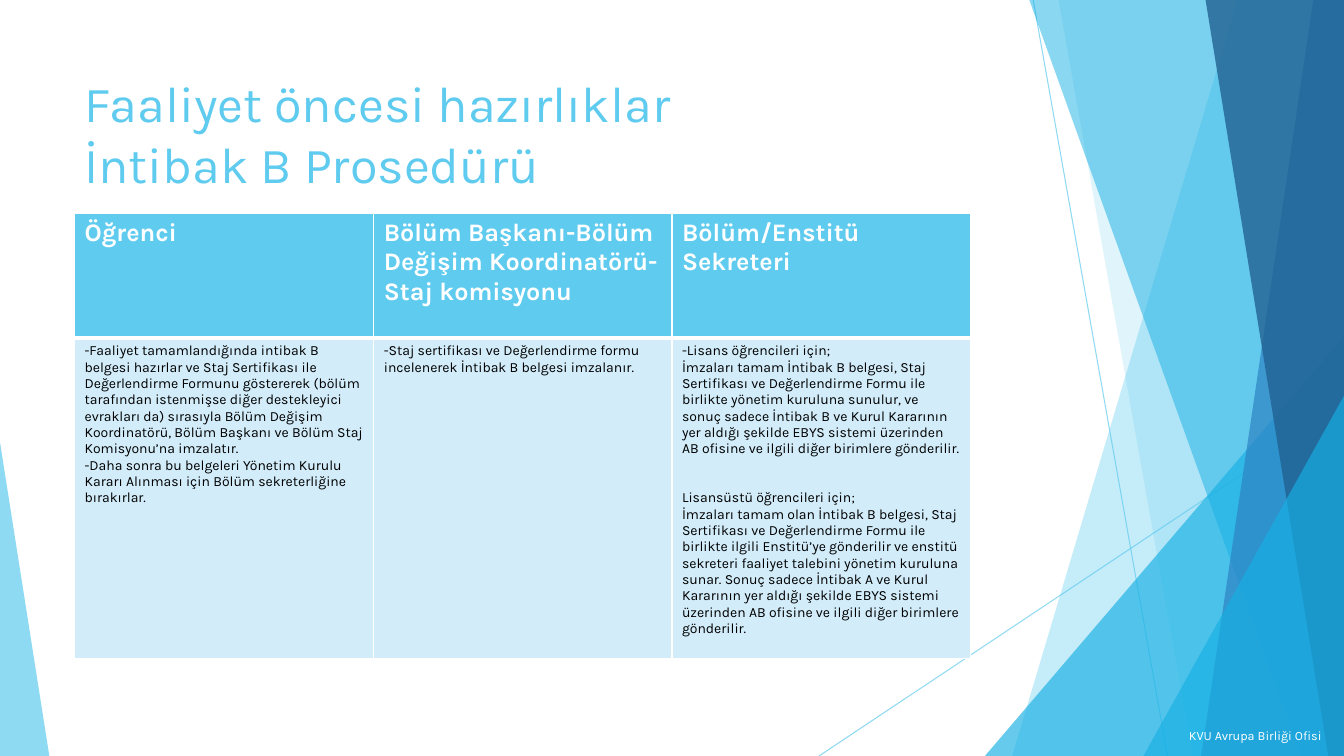
from typing import NamedTuple

from lxml import etree
from pptx import Presentation
from pptx.dml.color import RGBColor
from pptx.enum.shapes import MSO_CONNECTOR, MSO_SHAPE
from pptx.enum.text import MSO_ANCHOR, PP_ALIGN
from pptx.oxml.ns import qn
from pptx.util import Emu, Pt

SCALE = 9525  # EMU in one px
WIDTH, HEIGHT = 1280, 720
FONT = "Karla"
STRAIGHT = MSO_CONNECTOR.STRAIGHT
TRIANGLE = MSO_SHAPE.ISOSCELES_TRIANGLE
LEFT, RIGHT = PP_ALIGN.LEFT, PP_ALIGN.RIGHT
TOP, MIDDLE = MSO_ANCHOR.TOP, MSO_ANCHOR.MIDDLE
COLORS = {
    "sky": "5FCBEF",
    "cyan": "17B0E4",
    "blue": "2E83C3",
    "navy": "226292",
    "pale": "D2ECF9",
    "white": "FFFFFF",
    "black": "000000",
}


class Ray(NamedTuple):
    x1: int
    y1: int
    x2: int
    y2: int


class Facet(NamedTuple):
    """A full-height panel from a slanted left edge to the slide's right edge."""
    top: int
    bottom: int
    color: str
    alpha: int


class Wedge(NamedTuple):
    """A triangle standing on the slide's bottom edge."""
    left: int
    top: int
    width: int
    peak: int
    color: str
    alpha: int


class Label(NamedTuple):
    text: str
    box: tuple[int, int, int, int]
    size: int
    color: str
    align: PP_ALIGN
    anchor: MSO_ANCHOR


RAYS = [Ray(984, 0, 1112, HEIGHT), Ray(WIDTH, 387, 780, HEIGHT)]
PANELS = [
    Facet(1179, 964, "sky", 36),
    Facet(1008, 1136, "sky", 20),
    Wedge(938, 320, 342, 1, "cyan", 66),
    Facet(980, 1239, "cyan", 50),
    Facet(1251, 1144, "blue", 70),
    Facet(1148, 1265, "navy", 80),
    Wedge(1089, 377, 191, 1, "cyan", 66),
    Wedge(0, 421, 47, 0, "sky", 70),
]
TITLE = Label("Faaliyet öncesi hazırlıklar\vİntibak B Prosedürü",
              (71, 64, 902, 138), 36, "sky", LEFT, TOP)
FOOTER = Label("KVU Avrupa Birliği Ofisi",
               (607, 681, 661, 38), 9, "white", RIGHT, MIDDLE)

TABLE_AT = (71, 203)
COLUMNS = (285, 284, 284)
ROWS = (119, 305)
GAP_HEAD = "Lisansüstü öğrencileri için;"
HEADS = [
    ["Öğrenci"],
    ["Bölüm Başkanı-Bölüm Değişim Koordinatörü-Staj komisyonu"],
    ["Bölüm/Enstitü Sekreteri"],
]
DUTIES = [
    [
        "-Faaliyet tamamlandığında intibak B belgesi hazırlar ve Staj Sertifikası "
        "ile Değerlendirme Formunu göstererek (bölüm tarafından istenmişse diğer "
        "destekleyici evrakları da) sırasıyla Bölüm Değişim Koordinatörü, Bölüm "
        "Başkanı ve Bölüm Staj Komisyonu’na imzalatır.",
        "-Daha sonra bu belgeleri Yönetim Kurulu Kararı Alınması için Bölüm "
        "sekreterliğine bırakırlar.",
    ],
    [
        "-Staj sertifikası ve Değerlendirme formu incelenerek İntibak B belgesi "
        "imzalanır.",
    ],
    [
        "-Lisans öğrencileri için;",
        "İmzaları tamam İntibak B belgesi, Staj Sertifikası ve Değerlendirme Formu "
        "ile birlikte yönetim kuruluna sunulur, ve sonuç sadece İntibak B ve Kurul "
        "Kararının yer aldığı şekilde EBYS sistemi üzerinden AB ofisine ve ilgili "
        "diğer birimlere gönderilir.",
        GAP_HEAD,
        "İmzaları tamam olan İntibak B belgesi, Staj Sertifikası ve Değerlendirme "
        "Formu ile birlikte ilgili Enstitü’ye gönderilir ve enstitü sekreteri "
        "faaliyet talebini yönetim kuruluna sunar. Sonuç sadece İntibak A ve Kurul "
        "Kararının yer aldığı şekilde EBYS sistemi üzerinden AB ofisine ve ilgili "
        "diğer birimlere gönderilir.",
    ],
]


def px(*values: int) -> list[Emu]:
    return [Emu(value * SCALE) for value in values]


def rgb(name: str) -> RGBColor:
    return RGBColor.from_string(COLORS[name])


def fade(shape, alpha: int) -> None:
    """Set the opacity, in percent, of the shape's own colours."""
    for color in shape.element.iter(qn("a:srgbClr")):
        etree.SubElement(color, qn("a:alpha"), val=str(alpha * 1000))


def draw_ray(shapes, ray: Ray) -> None:
    line = shapes.add_connector(STRAIGHT, *px(*ray))
    line.line.color.rgb = rgb("sky")
    line.line.width = Pt(0.75)
    fade(line, 70)
    etree.SubElement(line.element.spPr, qn("a:effectLst"))


def draw_panel(shapes, panel: Facet | Wedge) -> None:
    if isinstance(panel, Facet):
        pen = shapes.build_freeform(panel.top, -1, scale=SCALE)
        pen.add_line_segments(
            [(WIDTH, -1), (WIDTH, HEIGHT), (panel.bottom, HEIGHT)], close=True)
        shape = pen.convert_to_shape()
    else:
        box = px(panel.left, panel.top, panel.width, HEIGHT - panel.top)
        shape = shapes.add_shape(TRIANGLE, *box)
        shape.adjustments[0] = panel.peak
    shape.shadow.inherit = False
    shape.line.fill.background()
    shape.fill.solid()
    shape.fill.fore_color.rgb = rgb(panel.color)
    fade(shape, panel.alpha)


def style(par, size: int, color: str, bold: bool = False) -> None:
    for run in par.runs:
        run.font.name = FONT
        run.font.size = Pt(size)
        run.font.bold = bold
        run.font.color.rgb = rgb(color)


def draw_label(shapes, label: Label) -> None:
    frame = shapes.add_textbox(*px(*label.box)).text_frame
    frame.word_wrap = True
    frame.vertical_anchor = label.anchor
    frame.text = label.text
    par = frame.paragraphs[0]
    par.alignment = label.align
    style(par, label.size, label.color)


def set_edges(cell, top: int, bottom: int) -> None:
    """Give the cell white borders, with widths in points."""
    props = cell._tc.get_or_add_tcPr()
    for tag, width in (("lnL", 1), ("lnR", 1), ("lnT", top), ("lnB", bottom)):
        edge = etree.SubElement(props, qn(f"a:{tag}"), w=str(Pt(width)))
        fill = etree.SubElement(edge, qn("a:solidFill"))
        etree.SubElement(fill, qn("a:srgbClr"), val=COLORS["white"])


def fill_cell(cell, lines: list[str], head: bool) -> None:
    set_edges(cell, *((1, 3) if head else (3, 1)))
    cell.fill.solid()
    cell.fill.fore_color.rgb = rgb("sky" if head else "pale")
    cell.text_frame.text = "\n".join(lines)
    for par in cell.text_frame.paragraphs:
        if par.text == GAP_HEAD:
            par.space_before = Pt(23.4)
        style(par, 18 if head else 10, "white" if head else "black", head)


def draw_table(shapes) -> None:
    box = px(*TABLE_AT, sum(COLUMNS), sum(ROWS))
    table = shapes.add_table(len(ROWS), len(COLUMNS), *box).table
    table.horz_banding = False
    for row, height in zip(table.rows, px(*ROWS)):
        row.height = height
    for column, width in zip(table.columns, px(*COLUMNS)):
        column.width = width
    for r, cells in enumerate((HEADS, DUTIES)):
        for c, lines in enumerate(cells):
            fill_cell(table.cell(r, c), lines, r == 0)


def main() -> None:
    deck = Presentation()
    deck.slide_width, deck.slide_height = px(WIDTH, HEIGHT)
    shapes = deck.slides.add_slide(deck.slide_layouts[6]).shapes
    for ray in RAYS:
        draw_ray(shapes, ray)
    for panel in PANELS:
        draw_panel(shapes, panel)
    draw_label(shapes, TITLE)
    draw_table(shapes)
    draw_label(shapes, FOOTER)
    deck.save("out.pptx")


if __name__ == "__main__":
    main()
